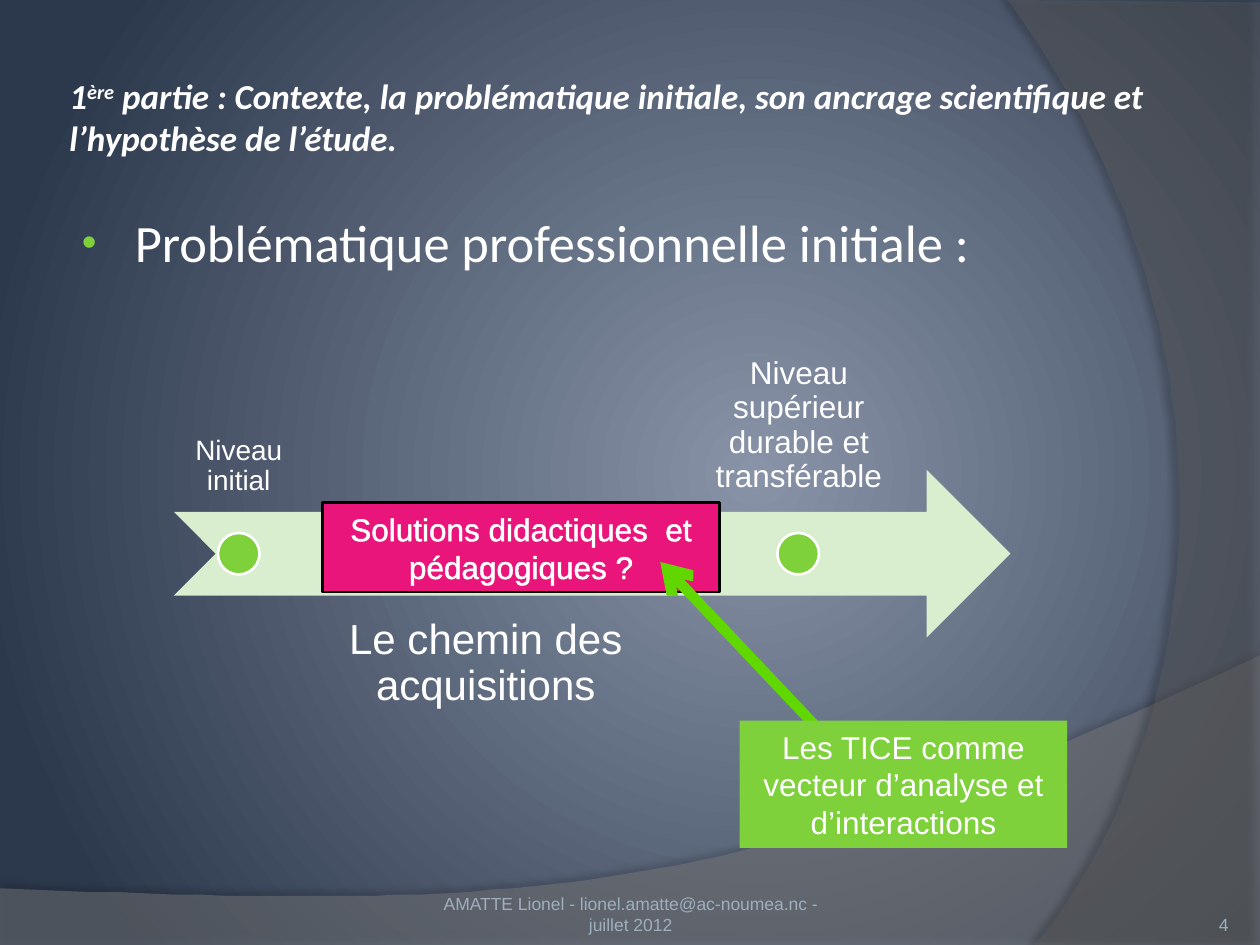
from dataclasses import dataclass

import lxml.etree
import pptx
import pptx.dml.color
import pptx.enum.shapes
import pptx.enum.text
import pptx.oxml.ns
import pptx.util

PX = 9144
SHAPE = pptx.enum.shapes.MSO_SHAPE
ALIGN = pptx.enum.text.PP_ALIGN
ANCHOR = pptx.enum.text.MSO_ANCHOR
qn = pptx.oxml.ns.qn


@dataclass(frozen=True)
class Theme:
    center: str = "8893A7"
    edge: str = "2C384C"
    wave: str = "7F7F7F"
    side: str = "5E5E5E"
    text: str = "FFFFFF"
    muted: str = "9EAFBD"
    green: str = "7FD13B"
    pale: str = "D8EECE"
    pink: str = "EA157A"
    black: str = "000000"
    arrow: str = "61D700"
    heading: str = "Calibri"
    body: str = "Arial"
    title_size: int = 20
    bullet_size: int = 30
    path_size: int = 24
    label_size: int = 18
    small_size: int = 16
    footer_size: int = 10


T = Theme()


def rgb(value):
    return pptx.dml.color.RGBColor.from_string(value)


def sub(parent, tag, **attrs):
    return lxml.etree.SubElement(parent, qn(tag), {k: str(v) for k, v in attrs.items()})


def place(sp, box):
    sp.left, sp.top, sp.width, sp.height = (v * PX for v in box)


def style_run(r, size, font=T.body, color=T.text):
    r.font.size = pptx.util.Pt(size)
    r.font.name = font
    r.font.color.rgb = rgb(color)


def write(sp, text, size, color=T.text, align=ALIGN.CENTER, anchor=ANCHOR.MIDDLE,
          insets=(10, 5, 10, 5), spacing=1.0):
    tf = sp.text_frame
    tf.text = text
    tf.word_wrap = True
    tf.vertical_anchor = anchor
    tf.margin_left, tf.margin_top, tf.margin_right, tf.margin_bottom = (v * PX for v in insets)
    p = tf.paragraphs[0]
    p.alignment = align
    p.line_spacing = spacing
    style_run(p.runs[0], size, color=color)
    return p


def add_label(shapes, box, text, size, **options):
    sp = shapes.add_textbox(*(v * PX for v in box))
    return write(sp, text, size, **options)


def add_block(shapes, kind, box, fill, line=None):
    sp = shapes.add_shape(kind, *(v * PX for v in box))
    sp.shadow.inherit = False
    sp.fill.solid()
    sp.fill.fore_color.rgb = rgb(fill)
    if line:
        sp.line.color.rgb = rgb(line)
        sp.line.width = pptx.util.Pt(1.5)
    else:
        sp.line.fill.background()
    return sp


def bezier(a, b, c, d, steps=48):
    for i in range(1, steps + 1):
        t = i / steps
        u = 1 - t
        weights = (u**3, 3 * u * u * t, 3 * u * t * t, t**3)
        yield tuple(sum(w * pt[k] for w, pt in zip(weights, (a, b, c, d))) for k in (0, 1))


def add_backdrop(s, layer, points, color, alpha, shadow):
    builder = s.shapes.build_freeform(*points[0], scale=PX)
    builder.add_line_segments(points[1:], close=True)
    sp = builder.convert_to_shape()
    sp.shadow.inherit = False
    sp.fill.solid()
    sp.fill.fore_color.rgb = rgb(color)
    sp.line.fill.background()
    sub(sp.element.find(".//" + qn("a:srgbClr")), "a:alpha", val=alpha * 1000)
    opacity, distance, direction = shadow
    effect = sub(sp.element.spPr.find(qn("a:effectLst")), "a:outerShdw", blurRad=50800,
                 dist=int(pptx.util.Pt(distance)), dir=direction * 60000,
                 algn="ctr", rotWithShape=0)
    sub(sub(effect, "a:srgbClr", val=T.black), "a:alpha", val=opacity * 1000)
    s.shapes.element.insert(2 + layer, sp.element)


def add_background(s, box):
    x, y, w, h = box
    fill = s.background.fill
    fill.gradient()
    for stop, color in zip(fill.gradient_stops, (T.center, T.edge)):
        stop.color.rgb = rgb(color)
    lin = s.element.find(".//" + qn("a:lin"))
    grad = lin.getparent()
    grad.remove(lin)
    sub(sub(grad, "a:path", path="circle"), "a:fillToRect",
        l=60000, t=50000, r=40000, b=50000)
    right, bottom = x + w, y + h
    wave_start, side_start = (right, y + 520), (x + 821, bottom)
    wave = [(x, bottom + 1), (right, bottom + 1), wave_start,
            *bezier(wave_start, (x + 559, y + 729), (x + 391, y + 719), (x, y + 705))]
    side = [(right, y + 2), (right, bottom), side_start,
            *bezier(side_start, (x + 935, y + 619), (x + 1018, y + 300), (x + 800, y))]
    add_backdrop(s, 0, wave, T.wave, 45, (35, 3.5, 270))
    add_backdrop(s, 1, side, T.side, 40, (45, 4, 180))


def fill_title(sp, box):
    place(sp, box)
    p = write(sp, "1", T.title_size, align=ALIGN.LEFT, insets=(5, 5, 5, 5))
    for text in ("ère", " partie : Contexte, la problématique initiale, son ancrage "
                 "scientifique et l’hypothèse de l’étude."):
        p.add_run().text = text
    for r in p.runs:
        style_run(r, T.title_size, T.heading)
        r.font.bold = r.font.italic = True
    p.runs[1]._r.get_or_add_rPr().set("baseline", "30000")


def fill_body(sp, box):
    place(sp, box)
    p = write(sp, "Problématique professionnelle initiale :", T.bullet_size,
              align=ALIGN.LEFT, anchor=ANCHOR.TOP)
    style_run(p.runs[0], T.bullet_size, T.heading)
    pPr = p._p.get_or_add_pPr()
    pPr.set("marL", str(46 * PX))
    pPr.set("indent", str(-42 * PX))
    sub(sub(pPr, "a:buClr"), "a:srgbClr", val=T.green)
    sub(pPr, "a:buSzPct", val=80000)
    sub(pPr, "a:buFont", typeface=T.body)
    sub(pPr, "a:buChar", char="•")


def add_path(s, box):
    x, y, w, h = box
    band = 133
    middle = y + h // 2
    dot = 33
    shapes = s.shapes.add_group_shape().shapes
    add_block(shapes, SHAPE.NOTCHED_RIGHT_ARROW, (x, middle - band // 2, w, band), T.pale)
    labels = (
        (0, y, 103, "Niveau initial", T.small_size, 12, ANCHOR.BOTTOM),
        (105, y + h - band, 285, "Le chemin des acquisitions", T.path_size, 19, ANCHOR.TOP),
        (394, y, 204, "Niveau supérieur durable et transférable", T.label_size, 14,
         ANCHOR.BOTTOM),
    )
    for dx, top, width, text, size, inset, anchor in labels:
        add_label(shapes, (x + dx, top, width, band), text, size, anchor=anchor,
                  insets=(inset,) * 4, spacing=0.9)
    for dx in (35, 479):
        add_block(shapes, SHAPE.OVAL, (x + dx, middle - dot // 2, dot, dot), T.green, T.text)


def add_solutions(s, box):
    sp = add_block(s.shapes, SHAPE.RECTANGLE, box, T.pink, T.black)
    p = write(sp, "Solutions didactiques  et pédagogiques ?", T.label_size)
    outline = lxml.etree.Element(qn("a:ln"), w="18415")
    sub(sub(outline, "a:solidFill"), "a:srgbClr", val=T.text)
    p.runs[0]._r.get_or_add_rPr().insert(0, outline)


def add_tools(s, box):
    x, y, w, h = box
    line = s.shapes.add_connector(pptx.enum.shapes.MSO_CONNECTOR.STRAIGHT,
                                  *(v * PX for v in (x + 78, y + 23, x - 63, y - 126)))
    line.line.color.rgb = rgb(T.arrow)
    line.line.width = pptx.util.Pt(6)
    sub(line.line._get_or_add_ln(), "a:tailEnd", type="arrow")
    sub(line._element.spPr, "a:effectLst")
    sp = add_block(s.shapes, SHAPE.RECTANGLE, box, T.green)
    write(sp, "Les TICE comme vecteur d’analyse et d’interactions", T.label_size)


def add_footer(s, box):
    x, y, w, h = box
    common = {"color": T.muted, "anchor": ANCHOR.BOTTOM}
    add_label(s.shapes, (x + w - 83, y, 83, h), "4", T.footer_size, align=ALIGN.RIGHT,
              insets=(0, 0, 0, 0), **common)
    add_label(s.shapes, (x, y, 317, h),
              "AMATTE Lionel - lionel.amatte@ac-noumea.nc - juillet 2012",
              T.footer_size, insets=(0, 5, 0, 0), **common)


def main():
    prs = pptx.Presentation()
    prs.slide_width, prs.slide_height = 1000 * PX, 750 * PX
    s = prs.slides.add_slide(prs.slide_layouts[1])
    add_background(s, (0, 0, 1000, 750))
    fill_title(s.shapes.title, (50, 30, 891, 125))
    fill_body(s.placeholders[1], (51, 162, 817, 71))
    add_path(s, (138, 273, 664, 332))
    add_solutions(s, (256, 399, 315, 71))
    add_tools(s, (587, 572, 260, 101))
    add_footer(s, (342, 702, 633, 40))
    prs.save("out.pptx")


if __name__ == "__main__":
    main()
